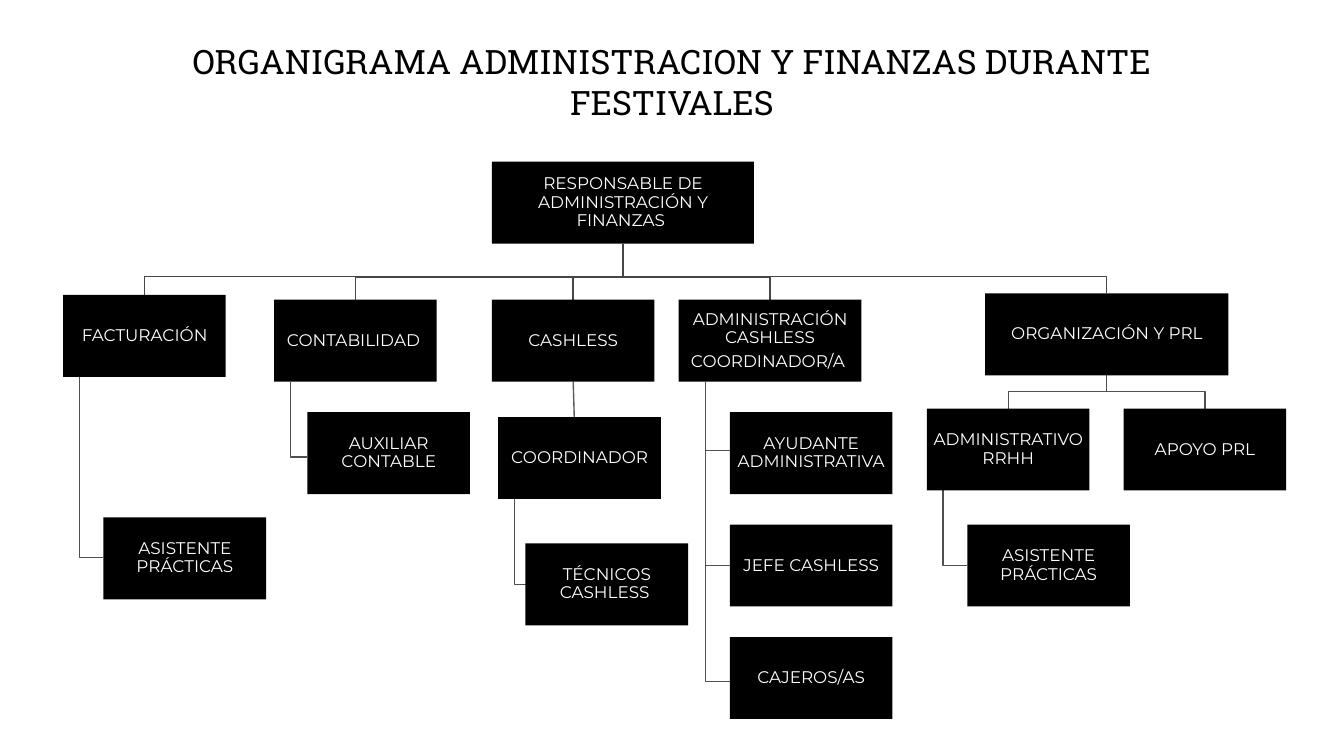
from lxml import etree
from pptx import Presentation
from pptx.dml.color import RGBColor
from pptx.enum import shapes, text
from pptx.oxml.ns import qn
from pptx.util import Inches, Pt

COLORS = {"ink": "000000", "paper": "FFFFFF", "main": "464646",
          "branch": "505050", "straight": "595959"}
SLIDE_W = Inches(10)
SLIDE_H = SLIDE_W * 9 // 16
CELL = SLIDE_W / 100  # square grid, 100 columns wide
POST_H = 6.1
NARROW = 12.1

# Post: lines, left column, top row, width in columns
POSTS = {
    "head": (["RESPONSABLE DE ADMINISTRACIÓN Y FINANZAS "], 36.6, 12.03, 19.5),
    "billing": (["FACTURACIÓN"], 4.7, 21.95, NARROW),
    "billing trainee": (["ASISTENTE PRÁCTICAS"], 7.7, 38.5, NARROW),
    "accounts": (["CONTABILIDAD "], 20.4, 22.3, NARROW),
    "accounts aide": (["AUXILIAR CONTABLE"], 22.87, 30.67, NARROW),
    "cashless": (["CASHLESS"], 36.6, 22.3, NARROW),
    "coordinator": (["COORDINADOR"], 37.07, 31.03, NARROW),
    "technicians": (["TÉCNICOS CASHLESS "], 39.1, 40.43, NARROW),
    "cashless admin": (["ADMINISTRACIÓN CASHLESS", "COORDINADOR/A "], 50.5, 22.3, 13.6),
    "admin aide": (["AYUDANTE ADMINISTRATIVA"], 54.3, 30.67, NARROW),
    "cashless chief": (["JEFE CASHLESS"], 54.3, 39.03, NARROW),
    "cashiers": (["CAJEROS/AS"], 54.3, 47.4, NARROW),
    "organization": (["ORGANIZACIÓN Y PRL"], 73.3, 21.83, 18.1),
    "hr": (["ADMINISTRATIVO RRHH"], 68.97, 30.4, NARROW),
    "hr trainee": (["ASISTENTE PRÁCTICAS"], 71.97, 39.03, NARROW),
    "safety": (["APOYO PRL"], 83.6, 30.4, NARROW),
}

# Parent: row of the shared bar, children, line colour
DROPS = {
    "head": (20.6, ["organization", "cashless admin", "cashless", "accounts",
                    "billing"], "main"),
    "organization": (29.15, ["hr", "safety"], "branch"),
}

# Parent: indent of the stem in columns, row at which each child is met
HANGS = {
    "billing": (1.2, {"billing trainee": 41.5}),
    "accounts": (1.2, {"accounts aide": 34}),
    "coordinator": (1.2, {"technicians": 43.5}),
    "cashless admin": (2, {"cashiers": 50.7, "cashless chief": 42.1, "admin aide": 33.5}),
    "hr": (1.2, {"hr trainee": 42.1}),
}


def rgb(name):
    return RGBColor.from_string(COLORS[name])


def apply_format(target, values):
    for attribute, value in values.items():
        setattr(target, attribute, value)


def place(column, row):
    return round(column * CELL), round(row * CELL)


def bottom_center(post):
    _, left, top, width = POSTS[post]
    return left + width / 2, top + POST_H


def style_line(line, color):
    line.color.rgb = rgb(color)
    line.width = Pt(0.75)


def add_title(slide, wording):
    title = slide.shapes.title
    left, top = place(7.2, 1.93)
    width, height = place(85.6, 8.3)
    apply_format(title, {"left": left, "top": top, "width": width, "height": height})
    frame = title.text_frame
    apply_format(frame, {
        "text": wording, "word_wrap": True, "auto_size": text.MSO_AUTO_SIZE.NONE,
        "vertical_anchor": text.MSO_ANCHOR.MIDDLE,
        "margin_left": Inches(0.07), "margin_right": Inches(0.07),
        "margin_top": Inches(0.04), "margin_bottom": Inches(0.04)})
    paragraph = frame.paragraphs[0]
    paragraph.alignment = text.PP_ALIGN.CENTER
    apply_format(paragraph.font, {"size": Pt(18), "name": "Roboto Slab"})
    paragraph.font.color.rgb = rgb("ink")


def add_post(slide, lines, left, top, width):
    box = slide.shapes.add_shape(shapes.MSO_SHAPE.RECTANGLE,
                                 *place(left, top), *place(width, POST_H))
    box.shadow.inherit = False
    box.fill.solid()
    box.fill.fore_color.rgb = rgb("ink")
    box.line.fill.background()
    frame = box.text_frame
    apply_format(frame, {"word_wrap": True, "vertical_anchor": text.MSO_ANCHOR.MIDDLE})
    apply_format(frame, {f"margin_{side}": Inches(0.01)
                         for side in ("left", "right", "top", "bottom")})
    for index, wording in enumerate(lines):
        paragraph = frame.add_paragraph() if index else frame.paragraphs[0]
        apply_format(paragraph, {"text": wording, "line_spacing": 0.9,
                                 "alignment": text.PP_ALIGN.CENTER})
        if index:
            paragraph.space_before = Pt(3.1)
        apply_format(paragraph.font, {"size": Pt(9), "name": "Montserrat"})
        paragraph.font.color.rgb = rgb("paper")


def add_elbow(slide, points, color):
    start, *rest = [place(*point) for point in points]
    builder = slide.shapes.build_freeform(*start)
    builder.add_line_segments(rest, close=False)
    elbow = builder.convert_to_shape()
    elbow.shadow.inherit = False
    elbow.fill.background()
    style_line(elbow.line, color)


def add_drop(slide, parent, child, bar, color):
    x, y = bottom_center(parent)
    child_x = bottom_center(child)[0]
    add_elbow(slide, [(x, y), (x, bar), (child_x, bar), (child_x, POSTS[child][2])], color)


def add_hang(slide, parent, child, indent, row):
    stem = POSTS[parent][1] + indent
    top = bottom_center(parent)[1]
    add_elbow(slide, [(stem, top), (stem, row), (POSTS[child][1], row)], "branch")


def add_straight(slide, start, end):
    link = slide.shapes.add_connector(shapes.MSO_CONNECTOR.STRAIGHT,
                                      *place(*start), *place(*end))
    style_line(link.line, "straight")
    etree.SubElement(link._element.spPr, qn("a:effectLst"))


def main():
    deck = Presentation()
    apply_format(deck, {"slide_width": SLIDE_W, "slide_height": SLIDE_H})
    slide = deck.slides.add_slide(deck.slide_layouts[5])
    add_title(slide, "ORGANIGRAMA ADMINISTRACION Y FINANZAS DURANTE FESTIVALES")

    # Links lie behind the posts
    add_straight(slide, bottom_center("cashless"), (42.8, 33.5))
    for parent, (bar, children, color) in DROPS.items():
        for child in children:
            add_drop(slide, parent, child, bar, color)
    for parent, (indent, children) in HANGS.items():
        for child, row in children.items():
            add_hang(slide, parent, child, indent, row)

    # Posts
    for post in POSTS.values():
        add_post(slide, *post)
    deck.save("out.pptx")


if __name__ == "__main__":
    main()
